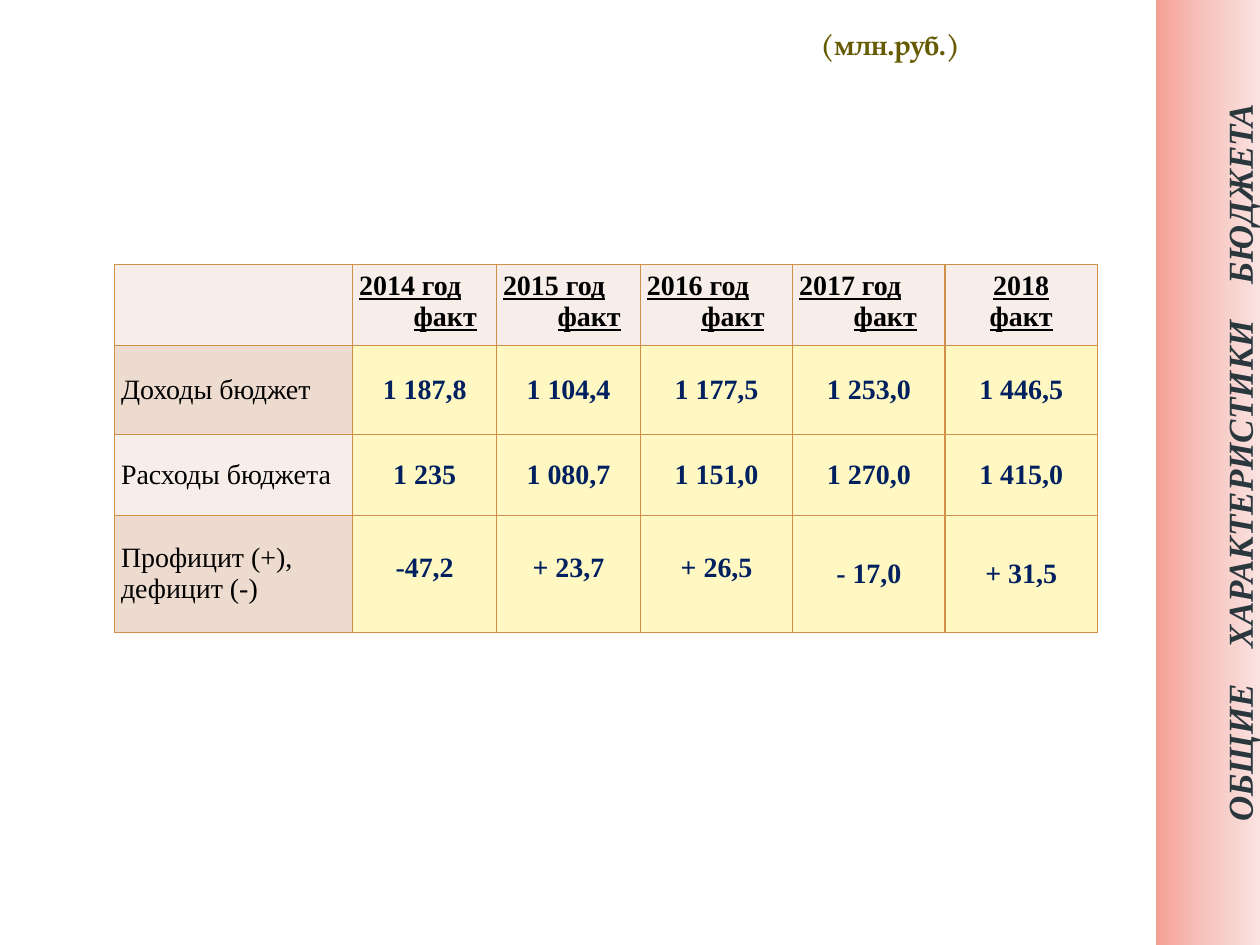
from lxml import etree
from pptx import Presentation
from pptx.dml.color import RGBColor
from pptx.enum.shapes import MSO_SHAPE
from pptx.enum.text import MSO_ANCHOR, PP_ALIGN
from pptx.oxml import parse_xml
from pptx.util import Cm, Pt

LEFT, CENTER, RIGHT = PP_ALIGN.LEFT, PP_ALIGN.CENTER, PP_ALIGN.RIGHT
TOP, MIDDLE, BOTTOM = MSO_ANCHOR.TOP, MSO_ANCHOR.MIDDLE, MSO_ANCHOR.BOTTOM
NAMESPACE = "http://schemas.openxmlformats.org/drawingml/2006/main"

SLIDE_WIDTH, SLIDE_HEIGHT = 25.4, 19.05
BAND_WIDTH = 2.1
BAND_WORDS = ["ОБЩИЕ", "ХАРАКТЕРИСТИКИ", "БЮДЖЕТА"]
BAND_STOPS = [(0, "F4A095"), (50, "F6C5BF"), (100, "FAE2E0")]
UNIT = "(млн.руб.)"

ROWS = [
    ["", "2014 год факт", "2015 год факт", "2016 год факт", "2017 год факт", "2018\nфакт"],
    ["Доходы бюджет", "1 187,8", "1 104,4", "1 177,5", "1 253,0", "1 446,5"],
    ["Расходы бюджета", "1 235", "1 080,7", "1 151,0", "1 270,0", "1 415,0"],
    ["Профицит (+), дефицит (-)", "-47,2", "+ 23,7", "+ 26,5", "- 17,0", "+ 31,5"],
]
COLUMN_WIDTHS = [4.8, 2.9, 2.9, 3.07, 3.07, 3.07]
ROW_HEIGHTS = [1.63, 1.8, 1.63, 2.36]
LABEL_FILLS = ["F7EEE9", "EEDBD0"]
VALUE_FILL = "FFF8C2"
BORDER = "D19049"
INSET = 0.13
HANGING = 1.1
RAISED_BOTTOM = 0.37


def color(value):
    return RGBColor.from_string(value)


def style_runs(paragraph, size, value, name="Times New Roman", bold=True, underline=None, italic=None):
    for run in paragraph.runs:
        font = run.font
        font.size, font.name, font.color.rgb = Pt(size), name, color(value)
        font.bold, font.underline, font.italic = bold, underline, italic


def set_insets(frame, left, top, right, bottom):
    frame.margin_left, frame.margin_top = Cm(left), Cm(top)
    frame.margin_right, frame.margin_bottom = Cm(right), Cm(bottom)


def set_borders(cell):
    properties = cell._tc.get_or_add_tcPr()
    for index, side in enumerate(("lnL", "lnR", "lnT", "lnB")):
        properties.insert(index, parse_xml(
            f'<a:{side} xmlns:a="{NAMESPACE}" w="{Pt(1)}"><a:solidFill>'
            f'<a:srgbClr val="{BORDER}"/></a:solidFill></a:{side}>'))


def set_hanging_indent(paragraph):
    properties = paragraph._p.get_or_add_pPr()
    properties.set("marL", str(Cm(HANGING)))
    properties.set("indent", str(-Cm(HANGING)))


def fill_cell(cell, text, row, column):
    is_header, is_label = row == 0, column == 0
    is_value = not is_header and not is_label
    is_raised = row == 3 and 1 <= column <= 3
    cell.fill.solid()
    cell.fill.fore_color.rgb = color(VALUE_FILL if is_value else LABEL_FILLS[row % 2])
    set_borders(cell)
    set_insets(cell, INSET, INSET, INSET, RAISED_BOTTOM if is_raised else INSET)
    cell.vertical_anchor = TOP if is_header else MIDDLE
    cell.text_frame.text = text
    for paragraph in cell.text_frame.paragraphs:
        wraps = is_header and "год" in text
        paragraph.alignment = LEFT if is_label or wraps else CENTER
        if wraps:
            set_hanging_indent(paragraph)
        style_runs(paragraph, 16, "002060" if is_value else "000000",
                   bold=not is_label, underline=is_header)


def add_unit(slide):
    box = slide.shapes.add_textbox(Cm(13.1), Cm(0.5), Cm(9.4), Cm(0.8))
    frame = box.text_frame
    frame.word_wrap = True
    frame.vertical_anchor = MIDDLE
    set_insets(frame, 0, 0, 3.15, 0)
    frame.text = UNIT
    paragraph = frame.paragraphs[0]
    paragraph.alignment = RIGHT
    style_runs(paragraph, 16.2, "665A00", "TeX Gyre Pagella")


def add_budget_table(slide):
    table = slide.shapes.add_table(
        len(ROWS), len(COLUMN_WIDTHS), Cm(2.31), Cm(5.33),
        Cm(sum(COLUMN_WIDTHS)), Cm(sum(ROW_HEIGHTS))).table
    table.first_row = table.horz_banding = False
    for column, width in zip(table.columns, COLUMN_WIDTHS):
        column.width = Cm(width)
    for row, height in zip(table.rows, ROW_HEIGHTS):
        row.height = Cm(height)
    for row, texts in enumerate(ROWS):
        for column, text in enumerate(texts):
            fill_cell(table.cell(row, column), text, row, column)


def add_title_band(slide):
    """Full-height band on the right whose title reads upwards."""
    center_x, center_y = SLIDE_WIDTH - BAND_WIDTH / 2, SLIDE_HEIGHT / 2
    band = slide.shapes.add_shape(
        MSO_SHAPE.RECTANGLE, Cm(center_x - SLIDE_HEIGHT / 2), Cm(center_y - BAND_WIDTH / 2),
        Cm(SLIDE_HEIGHT), Cm(BAND_WIDTH))
    band.rotation = 270
    band.shadow.inherit = False
    band.line.fill.background()
    band.fill.gradient()
    band.fill.gradient_angle = 270
    stops = band._element.spPr.find(f".//{{{NAMESPACE}}}gsLst")
    for stop in list(stops):
        stops.remove(stop)
    for position, value in BAND_STOPS:
        stop = etree.SubElement(stops, f"{{{NAMESPACE}}}gs", pos=str(position * 1000))
        etree.SubElement(stop, f"{{{NAMESPACE}}}srgbClr", val=value)

    frame = band.text_frame
    frame.word_wrap = True
    frame.vertical_anchor = BOTTOM
    set_insets(frame, 0.53, 0, INSET, 0)
    paragraph = frame.paragraphs[0]
    paragraph.alignment = CENTER
    for index, word in enumerate(BAND_WORDS):
        if index:
            gap = paragraph.add_run()
            gap.text = " "
            gap.font._element.set("spc", "1500")
        paragraph.add_run().text = word
    style_runs(paragraph, 20, "2A373D", italic=True)


presentation = Presentation()
presentation.slide_width, presentation.slide_height = Cm(SLIDE_WIDTH), Cm(SLIDE_HEIGHT)
slide = presentation.slides.add_slide(presentation.slide_layouts[6])
add_unit(slide)
add_budget_table(slide)
add_title_band(slide)
presentation.save("out.pptx")
